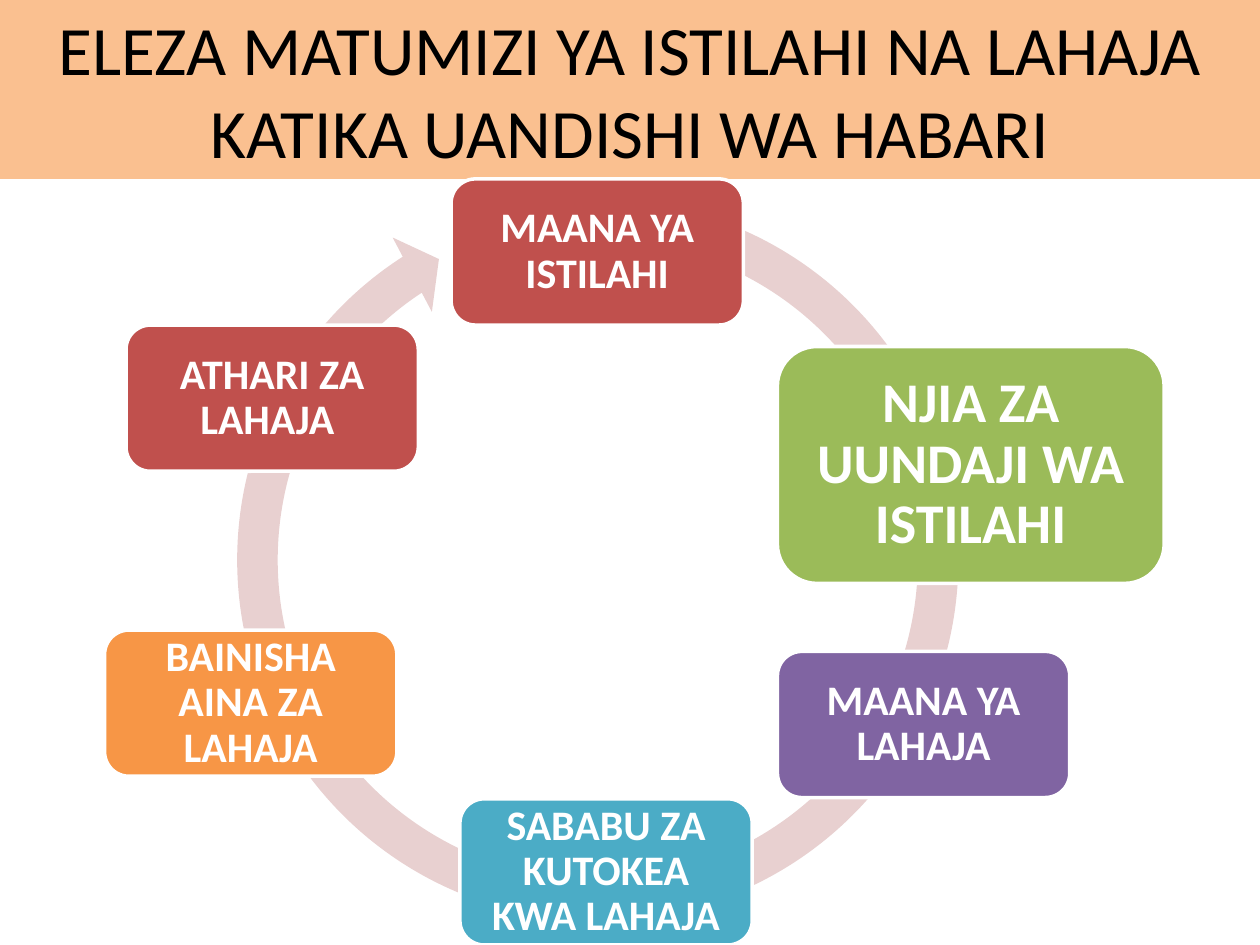
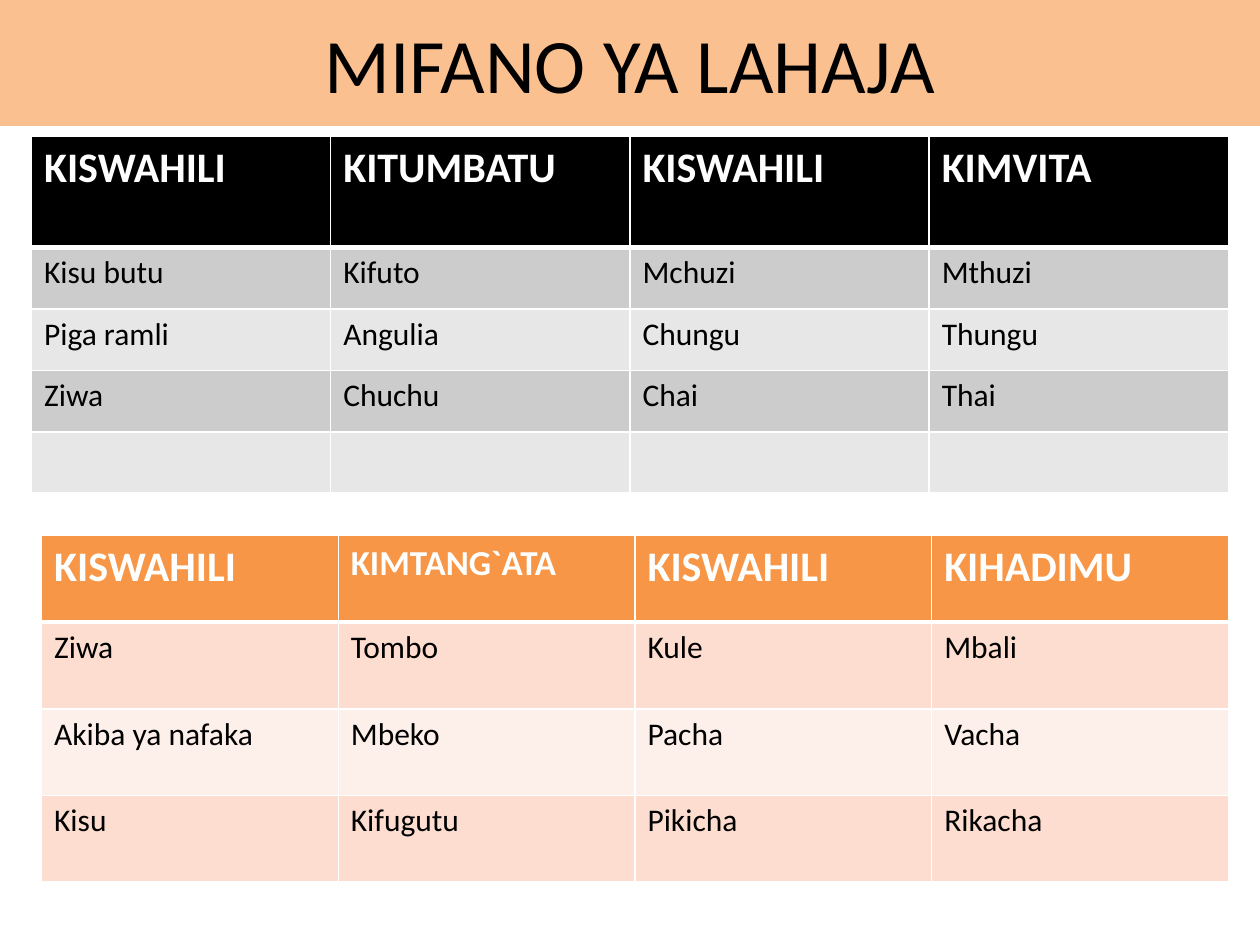
import dataclasses

import lxml.etree
import pptx
import pptx.dml.color
import pptx.enum.shapes
import pptx.enum.text
import pptx.oxml.ns
import pptx.util

SHAPES = pptx.enum.shapes.MSO_SHAPE
ALIGN = pptx.enum.text.PP_ALIGN
MIDDLE = pptx.enum.text.MSO_ANCHOR.MIDDLE


@dataclasses.dataclass(frozen=True)
class Theme:
    font: str = "Calibri"
    band: str = "FAC090"
    ink: str = "000000"
    paper: str = "FFFFFF"
    ring: str = "E8D0D0"
    red: str = "C0504D"
    green: str = "9BBB59"
    purple: str = "8064A2"
    teal: str = "4BACC6"
    orange: str = "F79646"
    grey_bands: tuple = ("CCCCCC", "E7E7E7")
    peach_bands: tuple = ("FCDDCF", "FDEFE9")
    title_size: float = 44
    long_title_size: float = 39.6
    focus_size: float = 32
    head_size: float = 24
    small_head_size: float = 20
    body_size: float = 18


T = Theme()
WIDTH = pptx.util.Inches(10)
HEIGHT = pptx.util.Inches(7.5)
STEP_SIZE = (23.2, 15.47)
FOCUS_SIZE = (30.7, 25.07)
RING_ADJUSTMENTS = (5300, 312600, 14217900, 17133000, 5500)

STEPS = [
    ("MAANA YA ISTILAHI", (35.8, 18.93), STEP_SIZE, T.red, T.head_size),
    ("NJIA ZA UUNDAJI WA ISTILAHI", (61.7, 36.67), FOCUS_SIZE, T.green, T.focus_size),
    ("MAANA YA LAHAJA", (61.7, 68.93), STEP_SIZE, T.purple, T.head_size),
    ("SABABU ZA KUTOKEA KWA LAHAJA", (36.5, 84.53), STEP_SIZE, T.teal, T.head_size),
    ("BAINISHA AINA ZA LAHAJA", (8.3, 66.67), STEP_SIZE, T.orange, T.head_size),
    ("ATHARI ZA LAHAJA ", (10, 34.4), STEP_SIZE, T.red, T.head_size),
]

TUMBATU_MVITA = [
    ["KISWAHILI", "KITUMBATU", "KISWAHILI", "KIMVITA"],
    ["Kisu butu", "Kifuto", "Mchuzi", "Mthuzi"],
    ["Piga ramli", "Angulia", "Chungu", "Thungu"],
    ["Ziwa", "Chuchu", "Chai", "Thai"],
    ["", "", "", ""],
]

MTANGATA_HADIMU = [
    ["KISWAHILI", "KIMTANG`ATA", "KISWAHILI", "KIHADIMU"],
    ["Ziwa", "Tombo", "Kule", "Mbali"],
    ["Akiba ya nafaka", "Mbeko", "Pacha", "Vacha"],
    ["Kisu", "Kifugutu", "Pikicha", "Rikacha"],
]


def x(percent):
    return round(WIDTH * percent / 100)


def y(percent):
    return round(HEIGHT * percent / 100)


def area(left, top, width, height):
    return x(left), y(top), x(width), y(height)


def rgb(color):
    return pptx.dml.color.RGBColor.from_string(color)


def paint(target, color):
    target.fill.solid()
    target.fill.fore_color.rgb = rgb(color)


def write(tf, text, size=T.body_size, color=T.ink, bold=False, align=None, spacing=None):
    p = tf.paragraphs[0]
    p.alignment = align
    p.line_spacing = spacing
    p.font.size = pptx.util.Pt(size)
    if text:
        r = p.add_run()
        r.text = text
        r.font.name = T.font
        r.font.size = pptx.util.Pt(size)
        r.font.bold = bold
        r.font.color.rgb = rgb(color)


def add_titled_slide(prs, title, height, size):
    s = prs.slides.add_slide(prs.slide_layouts[5])
    sp = s.shapes.title
    sp.left, sp.top, sp.width, sp.height = area(0, 0, 100, height)
    paint(sp, T.band)
    tf = sp.text_frame
    tf.auto_size = pptx.enum.text.MSO_AUTO_SIZE.NONE
    tf.vertical_anchor = MIDDLE
    write(tf, title, size=size, align=ALIGN.CENTER)
    return s


def add_preset(s, kind, box, color):
    sp = s.shapes.add_shape(kind, *area(*box))
    sp.shadow.inherit = False
    paint(sp, color)
    sp.line.fill.background()
    return sp


def add_ring(s, box):
    sp = add_preset(s, SHAPES.CIRCULAR_ARROW, box, T.ring)
    for i, value in enumerate(RING_ADJUSTMENTS):
        sp.adjustments[i] = value / 100000


def add_step(s, text, place, extent, color, size):
    sp = add_preset(s, SHAPES.ROUNDED_RECTANGLE, place + extent, color)
    sp.line.color.rgb = rgb(T.paper)
    sp.line.width = pptx.util.Pt(2)
    tf = sp.text_frame
    tf.word_wrap = True
    tf.vertical_anchor = MIDDLE
    inset = pptx.util.Pt(size * 0.3)
    tf.margin_left = tf.margin_right = tf.margin_top = tf.margin_bottom = inset
    write(tf, text, size=size, color=T.paper, bold=True, align=ALIGN.CENTER, spacing=0.9)


def set_borders(cell, top, bottom):
    tcPr = cell._tc.get_or_add_tcPr()
    widths = {"a:lnL": 1, "a:lnR": 1, "a:lnT": top, "a:lnB": bottom}
    for i, (tag, width) in enumerate(widths.items()):
        ln = lxml.etree.Element(pptx.oxml.ns.qn(tag), w=str(pptx.util.Pt(width)))
        fill = lxml.etree.SubElement(ln, pptx.oxml.ns.qn("a:solidFill"))
        lxml.etree.SubElement(fill, pptx.oxml.ns.qn("a:srgbClr"), val=T.paper)
        tcPr.insert(i, ln)


def add_word_table(s, rows, box, head_height, head_color, bands, small_heads=()):
    height = box[3]
    row_height = (height - head_height) / (len(rows) - 1)
    table = s.shapes.add_table(len(rows), len(rows[0]), *area(*box)).table
    for i, words in enumerate(rows):
        head = i == 0
        table.rows[i].height = y(head_height if head else row_height)
        for j, word in enumerate(words):
            cell = table.cell(i, j)
            paint(cell, head_color if head else bands[(i - 1) % 2])
            set_borders(cell, top=3 if i == 1 else 1, bottom=3 if head else 1)
            if head:
                size = T.small_head_size if word in small_heads else T.head_size
                write(cell.text_frame, word, size=size, color=T.paper, bold=True)
            else:
                write(cell.text_frame, word)


def main():
    prs = pptx.Presentation()
    prs.slide_width, prs.slide_height = WIDTH, HEIGHT

    s = add_titled_slide(
        prs,
        "ELEZA MATUMIZI YA ISTILAHI NA LAHAJA KATIKA UANDISHI WA HABARI",
        18.93,
        T.long_title_size,
    )
    add_ring(s, (17.1, 18.8, 60.7, 80.93))
    for step in STEPS:
        add_step(s, *step)

    s = add_titled_slide(prs, "MIFANO YA LAHAJA", 13.33, T.title_size)
    add_word_table(s, TUMBATU_MVITA, (2.5, 14.4, 95, 37.8), 11.8, T.ink, T.grey_bands)
    add_word_table(
        s,
        MTANGATA_HADIMU,
        (3.3, 56.67, 94.2, 36.67),
        9.17,
        T.orange,
        T.peach_bands,
        small_heads=("KIMTANG`ATA",),
    )

    prs.save("out.pptx")


if __name__ == "__main__":
    main()
